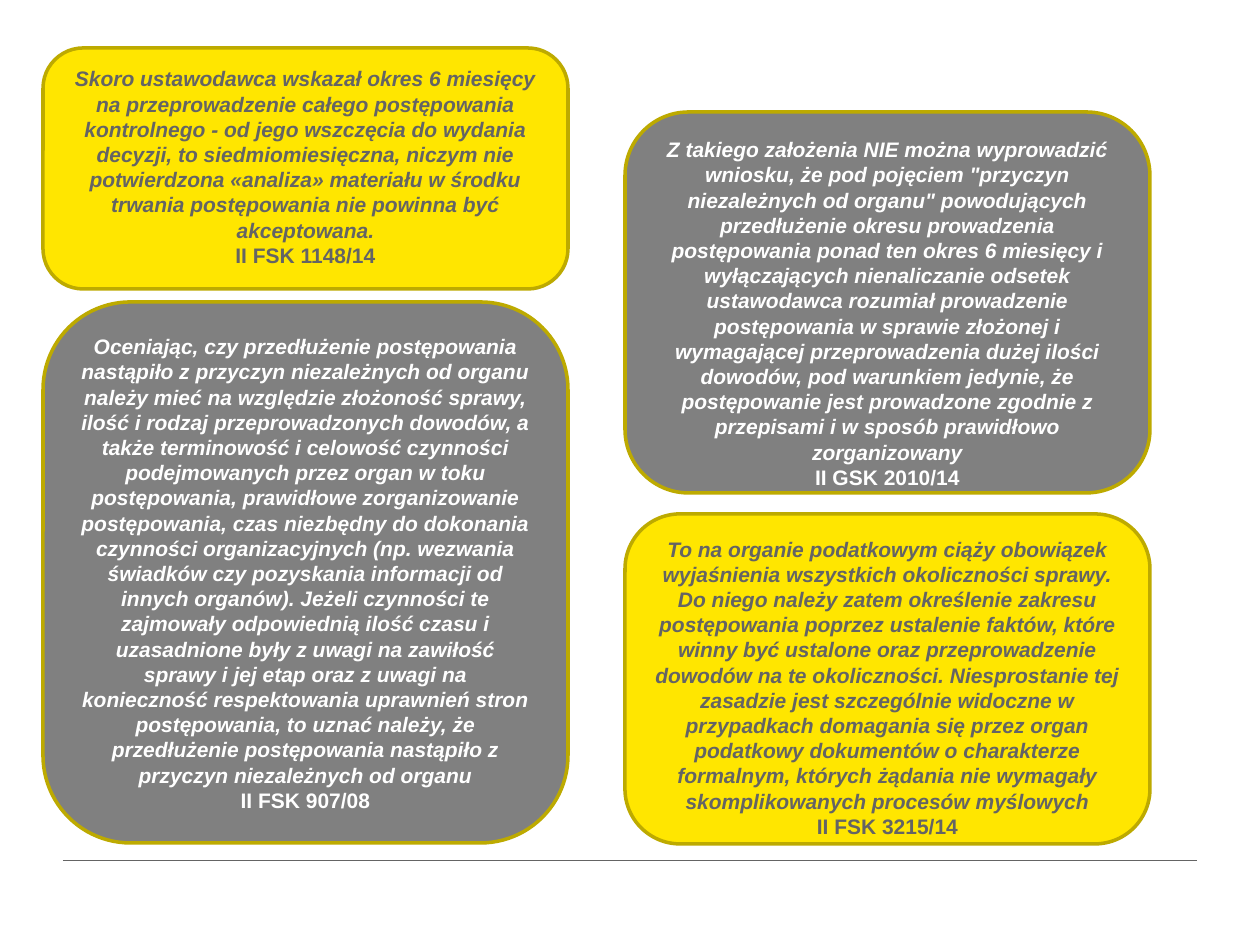
from pptx import Presentation
from pptx.dml.color import RGBColor
from pptx.enum.shapes import MSO_CONNECTOR, MSO_SHAPE
from pptx.enum.text import MSO_ANCHOR, PP_ALIGN
from pptx.util import Emu, Pt
from lxml import etree

ROUNDED = MSO_SHAPE.ROUNDED_RECTANGLE
STRAIGHT = MSO_CONNECTOR.STRAIGHT
TOP = MSO_ANCHOR.TOP
CENTER = PP_ALIGN.CENTER
EMU_PER_PX = 914400 // 126
A_NS = "http://schemas.openxmlformats.org/drawingml/2006/main"

YELLOW, GRAY, GOLD = "FFE600", "808080", "BDAA00"
DARK, WHITE = "646464", "FFFFFF"
LEFT_X, RIGHT_X, BOX_W = 43, 625, 525

RULINGS = [
    (LEFT_X, 48, 241, YELLOW, DARK,
     "Skoro ustawodawca wskazał okres 6 miesięcy na przeprowadzenie całego "
     "postępowania kontrolnego - od jego wszczęcia do wydania decyzji, to "
     "siedmiomiesięczna, niczym nie potwierdzona «analiza» materiału w środku "
     "trwania postępowania nie powinna być akceptowana.",
     "II FSK 1148/14"),
    (RIGHT_X, 112, 381, GRAY, WHITE,
     "Z takiego założenia NIE można wyprowadzić wniosku, że pod pojęciem "
     "\"przyczyn niezależnych od organu\" powodujących przedłużenie okresu "
     "prowadzenia postępowania ponad ten okres 6 miesięcy i wyłączających "
     "nienaliczanie odsetek ustawodawca rozumiał prowadzenie postępowania w "
     "sprawie złożonej i wymagającej przeprowadzenia dużej ilości dowodów, pod "
     "warunkiem jedynie, że postępowanie jest prowadzone zgodnie z przepisami i "
     "w sposób prawidłowo zorganizowany",
     "II GSK 2010/14"),
    (LEFT_X, 302, 541, GRAY, WHITE,
     "Oceniając, czy przedłużenie postępowania nastąpiło z przyczyn "
     "niezależnych od organu należy mieć na względzie złożoność sprawy, ilość i "
     "rodzaj przeprowadzonych dowodów, a także terminowość i celowość czynności "
     "podejmowanych przez organ w toku postępowania, prawidłowe zorganizowanie "
     "postępowania, czas niezbędny do dokonania czynności organizacyjnych (np. "
     "wezwania świadków czy pozyskania informacji od innych organów). Jeżeli "
     "czynności te zajmowały odpowiednią ilość czasu i uzasadnione były z uwagi "
     "na zawiłość sprawy i jej etap oraz z uwagi na konieczność respektowania "
     "uprawnień stron postępowania, to uznać należy, że przedłużenie "
     "postępowania nastąpiło z przyczyn niezależnych od organu",
     "II FSK 907/08"),
    (RIGHT_X, 514, 330, YELLOW, DARK,
     "To na organie podatkowym ciąży obowiązek wyjaśnienia wszystkich "
     "okoliczności sprawy. Do niego należy zatem określenie zakresu "
     "postępowania poprzez ustalenie faktów, które winny być ustalone oraz "
     "przeprowadzenie dowodów na te okoliczności. Niesprostanie tej zasadzie "
     "jest szczególnie widoczne w przypadkach domagania się przez organ "
     "podatkowy dokumentów o charakterze formalnym, których żądania nie "
     "wymagały skomplikowanych procesów myślowych",
     "II FSK 3215/14"),
]


def px(n):
    """Convert whole pixels to EMU."""
    return Emu(n * EMU_PER_PX)


def rgb(value):
    """Turn a hex string into a colour."""
    return RGBColor.from_string(value)


def add_paragraph(p, text, color, italic):
    """Fill a centred bold paragraph."""
    p.text = text
    p.alignment = CENTER
    for r in p.runs:
        r.font.name = "Arial"
        r.font.size = Pt(12)
        r.font.bold = True
        r.font.italic = italic
        r.font.color.rgb = rgb(color)


def add_ruling(slide, x, y, h, fill, color, quote, case_number):
    """Add a rounded box with a quotation and its case number."""
    sp = slide.shapes.add_shape(ROUNDED, px(x), px(y), px(BOX_W), px(h))
    sp.shadow.inherit = False
    sp.fill.solid()
    sp.fill.fore_color.rgb = rgb(fill)
    sp.line.color.rgb = rgb(GOLD)
    sp.line.width = Pt(2)
    tf = sp.text_frame
    tf.word_wrap = True
    tf.vertical_anchor = TOP
    add_paragraph(tf.paragraphs[0], quote, color, True)
    add_paragraph(tf.add_paragraph(), case_number, color, False)


def add_rule(slide, x1, x2, y):
    """Add the thin horizontal footer rule."""
    line = slide.shapes.add_connector(STRAIGHT, px(x1), px(y), px(x2), px(y))
    line.line.color.rgb = rgb(DARK)
    line.line.width = Pt(0.25)
    etree.SubElement(line._element.spPr, f"{{{A_NS}}}effectLst")


def main():
    """Build and save the slide."""
    prs = Presentation()
    prs.slide_width, prs.slide_height = px(1260), px(945)
    slide = prs.slides.add_slide(prs.slide_layouts[6])
    add_rule(slide, 63, 1197, 860)
    for ruling in RULINGS:
        add_ruling(slide, *ruling)
    prs.save("out.pptx")


if __name__ == "__main__":
    main()
